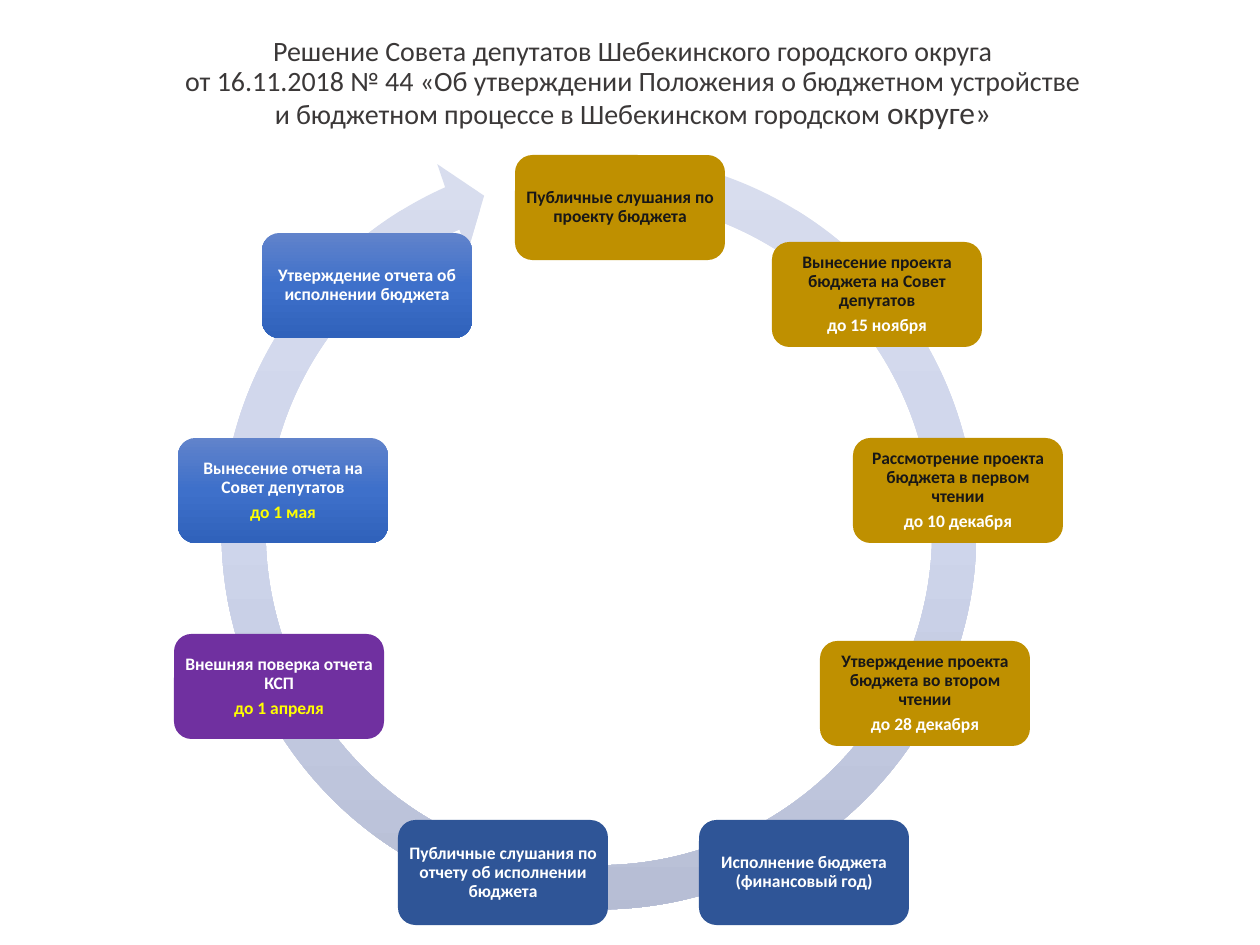
"""Build a slide showing the yearly budget cycle as a ring of steps."""
from lxml import etree
from pptx import Presentation
from pptx.dml.color import RGBColor
from pptx.enum.shapes import MSO_SHAPE
from pptx.enum.text import MSO_ANCHOR, MSO_AUTO_SIZE, PP_ALIGN
from pptx.oxml.ns import qn
from pptx.util import Pt

RING, BOX = MSO_SHAPE.CIRCULAR_ARROW, MSO_SHAPE.ROUNDED_RECTANGLE
MIDDLE, BOTTOM = MSO_ANCHOR.MIDDLE, MSO_ANCHOR.BOTTOM
CENTER, NO_FIT = PP_ALIGN.CENTER, MSO_AUTO_SIZE.NONE
PX = 914400 // 126

THEME = {
    "font": "Calibri", "title": 16, "large": 18, "step": 10,
    "grey": "3B3838", "dark": "181717", "white": "FFFFFF", "yellow": "FFFF00",
    "gold": "BF9000", "navy": "2F5597", "purple": "7030A0",
    "blue": ("6183CB", "3E70CA", "3062BB"),
    "ring": ("D8DDEE", "CED5EB", "B5BCD3"),
}

TITLE = (
    "Решение Совета депутатов Шебекинского городского округа\v"
    "от 16.11.2018 № 44 «Об утверждении Положения о бюджетном устройстве\v"
    "и бюджетном процессе в Шебекинском городском "
)
TITLE_END = "округе»"
TITLE_AT = (35, 20, 1171, 118)
RING_AT = (197, 130, 804, 804)
RING_ADJ = (0.055, 3.307, 147.379, 168.241, 0.058)
SIZE = (210, 105)

STYLES = {
    "draft": ("gold", "dark", "white"),
    "run": ("navy", "white", "white"),
    "audit": ("purple", "white", "yellow"),
    "report": ("blue", "white", "yellow"),
}

STEPS = [
    (515, 155, "draft", "Публичные слушания по проекту бюджета", ""),
    (772, 242, "draft", "Вынесение проекта бюджета на Совет депутатов", "до 15 ноября"),
    (853, 438, "draft", "Рассмотрение проекта бюджета в первом чтении", "до 10 декабря"),
    (820, 641, "draft", "Утверждение проекта бюджета во втором чтении", "до 28 декабря"),
    (699, 820, "run", "Исполнение бюджета (финансовый год)", ""),
    (398, 820, "run", "Публичные слушания по отчету об исполнении бюджета", ""),
    (174, 634, "audit", "Внешняя поверка отчета КСП", "до 1 апреля"),
    (178, 438, "report", "Вынесение отчета на Совет депутатов", "до 1 мая"),
    (262, 233, "report", "Утверждение отчета об исполнении бюджета", ""),
]


def emu(*nums):
    return [n * PX for n in nums]


def paint(shape, name):
    tone = THEME[name]
    if isinstance(tone, str):
        shape.fill.solid()
        shape.fill.fore_color.rgb = RGBColor.from_string(tone)
        return
    shape.fill.gradient()
    grad = shape.fill._xPr.find(qn("a:gradFill"))
    for node in list(grad):
        grad.remove(node)
    stops = etree.SubElement(grad, qn("a:gsLst"))
    for i, code in enumerate(tone):
        stop = etree.SubElement(stops, qn("a:gs"), pos=str(i * 50000))
        etree.SubElement(stop, qn("a:srgbClr"), val=code)
    etree.SubElement(grad, qn("a:lin"), ang="5400000", scaled="0")


def add(slide, kind, place, tone):
    shape = slide.shapes.add_shape(kind, *emu(*place))
    shape.shadow.inherit = False
    shape.line.fill.background()
    paint(shape, tone)
    return shape


def style(para, size, tone, bold):
    para.alignment = CENTER
    para.line_spacing = 0.9
    font = para.font
    font.name = THEME["font"]
    font.size = Pt(THEME[size])
    font.bold = bold
    font.color.rgb = RGBColor.from_string(THEME[tone])


def add_title(slide):
    title = slide.shapes.title
    title.left, title.top, title.width, title.height = emu(*TITLE_AT)
    frame = title.text_frame
    frame.word_wrap = True
    frame.auto_size = NO_FIT
    frame.vertical_anchor = BOTTOM
    frame.text = TITLE
    para = frame.paragraphs[0]
    para._p.get_or_add_pPr().set("marL", str(25 * PX))
    style(para, "title", "grey", False)
    end = para.add_run()
    end.text = TITLE_END
    end.font.size = Pt(THEME["large"])


def add_step(slide, left, top, kind, label, date):
    tone, ink, accent = STYLES[kind]
    frame = add(slide, BOX, (left, top, *SIZE), tone).text_frame
    frame.word_wrap = True
    frame.vertical_anchor = MIDDLE
    frame.margin_left, frame.margin_right, frame.margin_top, frame.margin_bottom = emu(5, 5, 5, 5)
    frame.text = label
    style(frame.paragraphs[0], "step", ink, True)
    if date:
        para = frame.add_paragraph()
        para.text = date
        para.space_before = Pt(3.5)
        style(para, "step", accent, True)


def main():
    deck = Presentation()
    deck.slide_width, deck.slide_height = emu(1260, 945)
    slide = deck.slides.add_slide(deck.slide_layouts[5])
    add_title(slide)
    ring = add(slide, RING, RING_AT, "ring")
    for i, value in enumerate(RING_ADJ):
        ring.adjustments[i] = value
    for step in STEPS:
        add_step(slide, *step)
    deck.save("out.pptx")


if __name__ == "__main__":
    main()
